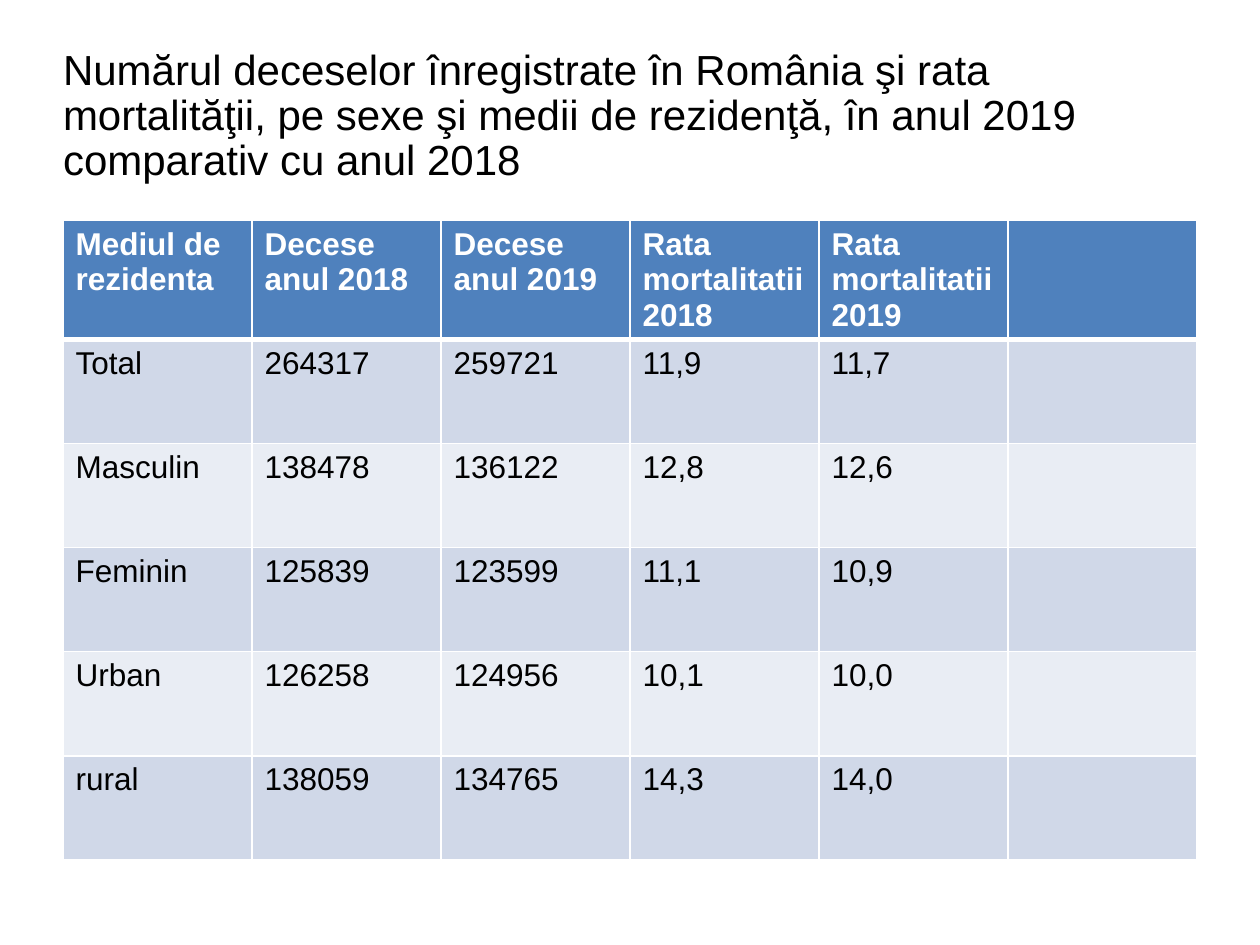
from dataclasses import dataclass

from lxml import etree
from pptx import Presentation
from pptx.dml.color import RGBColor
from pptx.enum.text import MSO_ANCHOR, MSO_AUTO_SIZE, PP_ALIGN
from pptx.oxml.ns import qn
from pptx.util import Cm, Pt

LEFT = PP_ALIGN.LEFT
MIDDLE = MSO_ANCHOR.MIDDLE
NO_AUTOFIT = MSO_AUTO_SIZE.NONE
TITLE_ONLY = 5

TITLE = (
    "Numărul deceselor înregistrate în România şi rata mortalităţii, "
    "pe sexe şi medii de rezidenţă, în anul 2019 comparativ cu anul 2018"
)
DEATHS = [
    ["Mediul de rezidenta", "Decese anul 2018", "Decese anul 2019",
     "Rata mortalitatii 2018", "Rata mortalitatii 2019", ""],
    ["Total", "264317", "259721", "11,9", "11,7", ""],
    ["Masculin", "138478", "136122", "12,8", "12,6", ""],
    ["Feminin", "125839", "123599", "11,1", "10,9", ""],
    ["Urban", "126258", "124956", "10,1", "10,0", ""],
    ["rural", "138059", "134765", "14,3", "14,0", ""],
]


@dataclass(frozen=True)
class Theme:
    font: str = "Arial"
    title_size: float = 24
    table_size: float = 18
    ink: str = "000000"
    paper: str = "FFFFFF"
    header: str = "4F81BD"
    bands: tuple = ("D0D8E8", "E9EDF4")
    rule: float = 1
    header_rule: float = 3


def write(frame, text, *, font, size, color, bold=False, spacing=None):
    paragraph = frame.paragraphs[0]
    paragraph.alignment = LEFT
    paragraph.line_spacing = spacing
    paragraph.font.size = Pt(size)
    if text:
        run = paragraph.add_run()
        run.text = text
        run.font.name = font
        run.font.size = Pt(size)
        run.font.bold = bold
        run.font.color.rgb = RGBColor.from_string(color)


class SlideBuilder:
    """Hold the theme and the current slide, and add styled elements to it."""

    def __init__(self, slide, theme):
        self.slide = slide
        self.theme = theme

    def title(self, text, left, top, width, height):
        heading = self.slide.shapes.title
        heading.left, heading.top = Cm(left), Cm(top)
        heading.width, heading.height = Cm(width), Cm(height)
        frame = heading.text_frame
        frame.word_wrap = True
        frame.auto_size = NO_AUTOFIT
        frame.vertical_anchor = MIDDLE
        frame.margin_left = frame.margin_right = 0
        frame.margin_top = frame.margin_bottom = 0
        write(frame, text, font=self.theme.font, size=self.theme.title_size,
              color=self.theme.ink, spacing=0.9)

    def borders(self, cell, **widths):
        properties = cell.fill._xPr
        for position, (side, width) in enumerate(widths.items()):
            line = etree.Element(qn(f"a:ln{side}"), w=str(Pt(width)))
            fill = etree.SubElement(line, qn("a:solidFill"))
            etree.SubElement(fill, qn("a:srgbClr"), val=self.theme.paper)
            properties.insert(position, line)

    def table(self, rows, left, top, width, row_height):
        theme = self.theme
        grid = self.slide.shapes.add_table(
            len(rows), len(rows[0]), Cm(left), Cm(top),
            Cm(width), Cm(row_height * len(rows))).table
        for r, values in enumerate(rows):
            is_header = r == 0
            fill = theme.header if is_header else theme.bands[(r - 1) % 2]
            for c, value in enumerate(values):
                cell = grid.cell(r, c)
                cell.fill.solid()
                cell.fill.fore_color.rgb = RGBColor.from_string(fill)
                write(cell.text_frame, value, font=theme.font,
                      size=theme.table_size, bold=is_header,
                      color=theme.paper if is_header else theme.ink)
                self.borders(
                    cell, L=theme.rule, R=theme.rule,
                    T=theme.header_rule if r == 1 else theme.rule,
                    B=theme.header_rule if is_header else theme.rule)


def main():
    deck = Presentation()
    deck.slide_width, deck.slide_height = Cm(25.4), Cm(19.05)
    slide = deck.slides.add_slide(deck.slide_layouts[TITLE_ONLY])
    builder = SlideBuilder(slide, Theme())
    builder.title(TITLE, 1.27, 0.97, 22.86, 2.77)
    builder.table(DEATHS, 1.27, 4.45, 22.86, 2.1)
    deck.save("out.pptx")


if __name__ == "__main__":
    main()
